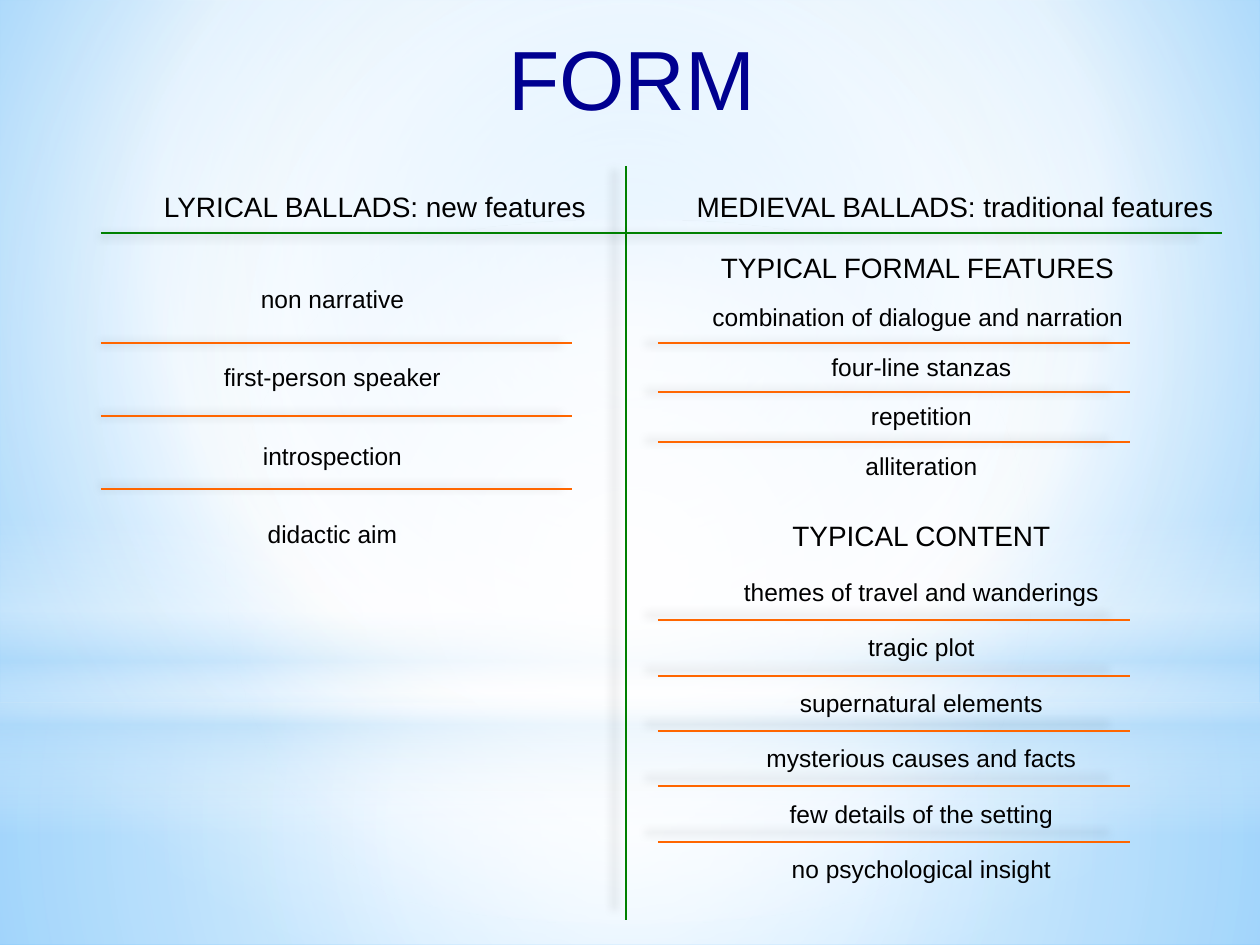
from lxml import etree
from pptx import Presentation
from pptx.dml.color import RGBColor
from pptx.enum.shapes import MSO_CONNECTOR, MSO_SHAPE
from pptx.enum.text import MSO_ANCHOR, PP_ALIGN
from pptx.oxml.ns import nsdecls, qn
from pptx.util import Pt

RECT, OVAL = MSO_SHAPE.RECTANGLE, MSO_SHAPE.OVAL
STRAIGHT = MSO_CONNECTOR.STRAIGHT
CENTER = PP_ALIGN.CENTER
TOP, BOTTOM = MSO_ANCHOR.TOP, MSO_ANCHOR.BOTTOM


class Theme:
    font = "Arial"
    title, heading, item = 48, 16, 14
    navy, black, green, orange = "000090", "000000", "008000", "FF6600"
    white, sky = "FFFFFF", "B4DCFA"
    rule = 1.25


# Gradient stops: position %, colour, opacity %
BACKDROP = [(0, "9ED5FF", 100), (60, Theme.white, 100), (100, "5BB9FF", 100)]
MIDDLE = (50, 50, 50, 50)
# Shape, box, stops, focus of a circular gradient (None: top to bottom)
LAYERS = [
    (RECT, (0, 703, 1260, 242),
     [(0, Theme.white, 91), (37, Theme.white, 76), (100, Theme.sky, 79)], MIDDLE),
    (RECT, (0, 0, 1260, 703),
     [(0, Theme.white, 89), (48, Theme.white, 62), (100, Theme.sky, 79)], MIDDLE),
    (RECT, (0, 519, 1260, 315),
     [(0, Theme.white, 0), (29, Theme.white, 30), (45, Theme.sky, 40),
      (55, Theme.white, 26), (65, Theme.sky, 60), (100, Theme.white, 0)], None),
    (OVAL, (0, 220, 1260, 703),
     [(0, Theme.white, 100), (56, Theme.white, 0)], MIDDLE),
]

TITLE = ("FORM", (45, 19, 1174, 115))
HEADINGS = [
    ("LYRICAL BALLADS: new features", (101, 183, 548, 47)),
    ("MEDIEVAL BALLADS: traditional features ", (658, 183, 602, 47)),
    ("TYPICAL FORMAL FEATURES ", (658, 244, 527, 47)),
    ("TYPICAL CONTENT", (658, 512, 527, 47)),
]
AXES = [(626, 166, 626, 920), (101, 233, 1222, 233)]

# Each list: text left and width, first and last text top,
# rule left and right, first and last rule height
LISTS = [
    dict(items=["non narrative", "first-person speaker", "introspection", "didactic aim"],
         box=(71, 523), tops=(278, 513), rule=(101, 572), rules=(343, 489)),
    dict(items=["combination of dialogue and narration ", "four-line stanzas",
                "repetition", "alliteration"],
         box=(658, 527), tops=(296, 445), rule=(658, 1130), rules=(343, 442)),
    dict(items=["themes of travel and wanderings", "tragic plot", "supernatural elements",
                "mysterious causes and facts", "few details of the setting",
                "no psychological insight"],
         box=(658, 527), tops=(571, 848), rule=(658, 1130), rules=(620, 842)),
]
ITEM_HEIGHT = 43


def px(*values):
    return [round(v * 914400 / 126) for v in values]


def spread(first, last, count):
    """Evenly spaced whole positions from first to last."""
    return [round(first + (last - first) * i / (count - 1)) for i in range(count)]


def set_gradient(element, stops, focus):
    """Put a gradient in place of the first empty fill inside element."""
    stop_xml = "".join(
        f'<a:gs pos="{pos * 1000}"><a:srgbClr val="{color}">'
        f'<a:alpha val="{alpha * 1000}"/></a:srgbClr></a:gs>'
        for pos, color, alpha in stops)
    if focus:
        sides = " ".join(f'{side}="{v * 1000}"' for side, v in zip("ltrb", focus))
        way = f'<a:path path="circle"><a:fillToRect {sides}/></a:path>'
    else:
        way = '<a:lin ang="5400000" scaled="0"/>'
    empty = next(element.iter(qn("a:noFill")))
    empty.getparent().replace(empty, etree.fromstring(
        f'<a:gradFill {nsdecls("a")} rotWithShape="1">'
        f'<a:gsLst>{stop_xml}</a:gsLst>{way}</a:gradFill>'))


def add_layer(slide, kind, box, stops, focus):
    sp = slide.shapes.add_shape(kind, *px(*box))
    sp.shadow.inherit = False
    sp.fill.background()
    set_gradient(sp.element, stops, focus)
    sp.line.fill.background()


def add_text(slide, text, box, size=Theme.item, color=Theme.black, anchor=TOP):
    tf = slide.shapes.add_textbox(*px(*box)).text_frame
    tf.word_wrap = True
    tf.vertical_anchor = anchor
    p = tf.paragraphs[0]
    p.alignment = CENTER
    r = p.add_run()
    r.text = text
    r.font.name = Theme.font
    r.font.size = Pt(size)
    r.font.color.rgb = RGBColor.from_string(color)


def add_rule(slide, ends, color):
    """Line with a soft shadow below it."""
    line = slide.shapes.add_connector(STRAIGHT, *px(*ends))
    line.line.color.rgb = RGBColor.from_string(color)
    line.line.width = Pt(Theme.rule)
    line.element.spPr.append(etree.fromstring(
        f'<a:effectLst {nsdecls("a")}><a:outerShdw blurRad="{Pt(5)}" dist="{Pt(4)}" '
        'dir="5400000" sx="98000" sy="98000" rotWithShape="0"><a:srgbClr val="000000">'
        '<a:alpha val="20000"/></a:srgbClr></a:outerShdw></a:effectLst>'))


def main():
    prs = Presentation()
    prs.slide_width, prs.slide_height = px(1260, 945)
    slide = prs.slides.add_slide(prs.slide_layouts[6])

    slide.background.fill.background()
    set_gradient(slide.element, BACKDROP, (20, 10, 20, 60))
    for layer in LAYERS:
        add_layer(slide, *layer)

    add_text(slide, *TITLE, size=Theme.title, color=Theme.navy, anchor=BOTTOM)
    for text, box in HEADINGS:
        add_text(slide, text, box, size=Theme.heading)
    for ends in AXES:
        add_rule(slide, ends, Theme.green)

    for group in LISTS:
        items = group["items"]
        left, width = group["box"]
        for text, top in zip(items, spread(*group["tops"], len(items))):
            add_text(slide, text, (left, top, width, ITEM_HEIGHT))
        start, end = group["rule"]
        for y in spread(*group["rules"], len(items) - 1):
            add_rule(slide, (start, y, end, y), Theme.orange)

    prs.save("out.pptx")


if __name__ == "__main__":
    main()
